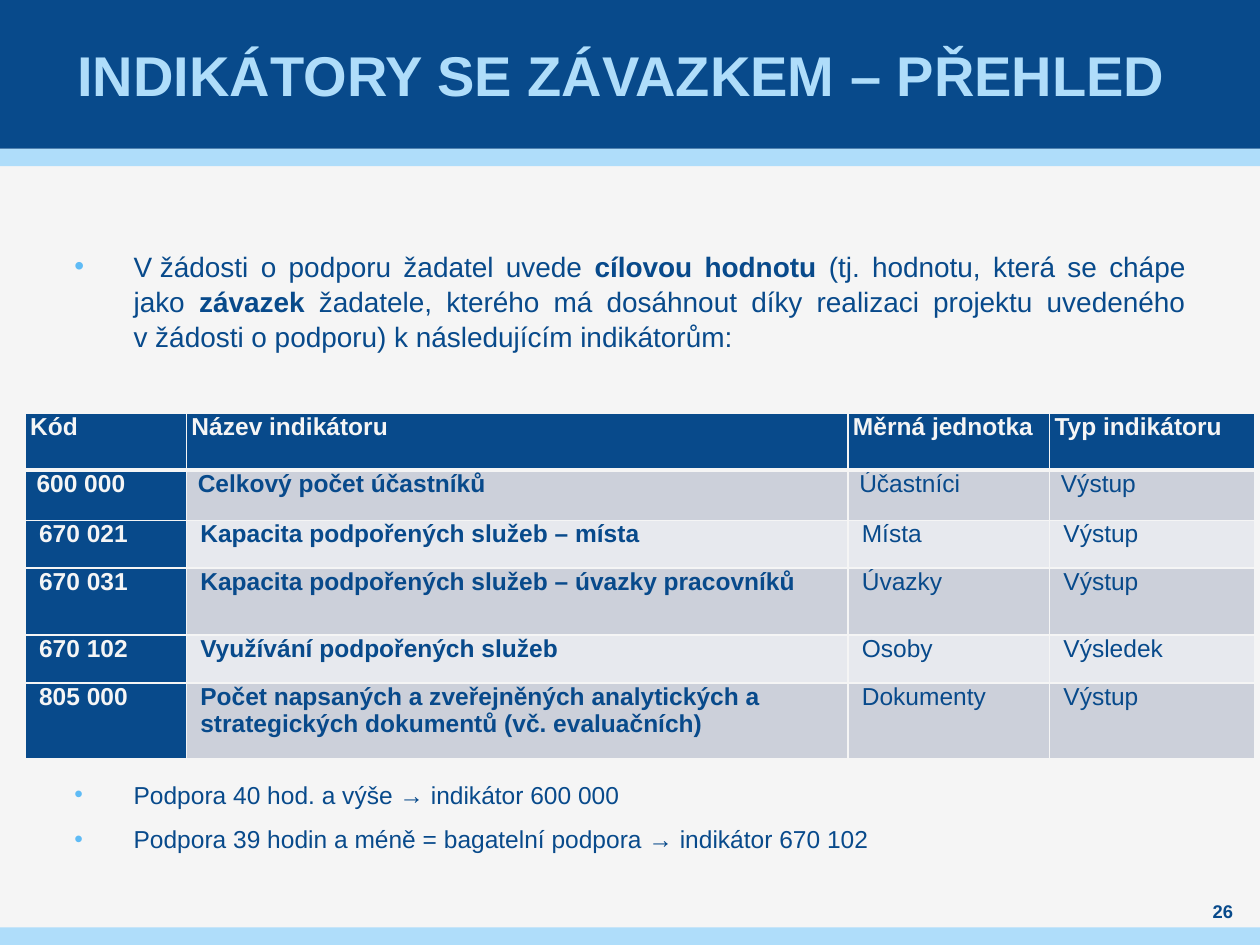
from lxml import etree
from pptx import Presentation, util as u
from pptx.dml.color import RGBColor
from pptx.enum import shapes, text
from pptx.oxml.ns import qn

WIDE, HIGH = 10, 7.5
THEME = {
    "navy": "084A8B", "sky": "AFDDFA", "pale": "F5F5F5", "dot": "5FBBF5",
    "odd": "CCD0DA", "even": "E7E9EE", "font": "Arial",
    "title": 32, "lead": 16, "text": 14, "page": 10.5,
}

TITLE = "INDIKÁTORY SE ZÁVAZKEM – PŘEHLED "
PAGE = "26"
# Each item is a list of (words, bold) runs.
LEAD = [[
    ("V\u00a0žádosti o podporu žadatel uvede ", False),
    ("cílovou hodnotu ", True),
    ("(tj. hodnotu, která se chápe jako ", False),
    ("závazek", True),
    (" žadatele, kterého má dosáhnout díky realizaci projektu uvedeného "
     "v\u00a0žádosti o podporu) k\u00a0následujícím indikátorům:", False),
]]
NOTES = [
    [("Podpora 40 hod. a výše → indikátor 600 000", False)],
    [("Podpora 39 hodin a méně = bagatelní podpora → indikátor 670 102", False)],
]
TABLE = [
    ("Kód", "Název indikátoru", "Měrná jednotka", "Typ indikátoru"),
    ("600 000", "Celkový počet účastníků", "Účastníci", "Výstup"),
    ("670 021", "Kapacita podpořených služeb – místa", "Místa", "Výstup"),
    ("670 031", "Kapacita podpořených služeb – úvazky pracovníků", "Úvazky", "Výstup"),
    ("670 102", "Využívání podpořených služeb", "Osoby", "Výsledek"),
    ("805 000", "Počet napsaných a zveřejněných analytických a strategických "
     "dokumentů (vč. evaluačních)", "Dokumenty", "Výstup"),
]
COLS = (1.28, 5.25, 1.6, 1.63)
ROWS = (0.45, 0.4, 0.38, 0.53, 0.38, 0.6)
PADS = (0.04, 0.09) + (0.11,) * 4
# Bands: top, height, colour
BANDS = [(1.18, 0.14, "sky"), (0, 1.18, "navy"), (HIGH - 0.14, 0.14, "sky")]


def tint(name):
    return RGBColor.from_string(THEME[name])


def place(*box):
    return [u.Inches(n) for n in box]


def apply(item, **look):
    for key, value in look.items():
        setattr(item, key, value)


def write(para, words, size, color, bold):
    run = para.add_run()
    run.text = words
    apply(run.font, name=THEME["font"], size=u.Pt(THEME[size]), bold=bold)
    run.font.color.rgb = tint(color)


def frame(slide, box, anchor=text.MSO_ANCHOR.TOP, side=0):
    area = slide.shapes.add_textbox(*place(*box)).text_frame
    apply(area, word_wrap=True, vertical_anchor=anchor, margin_top=0,
          margin_bottom=0, margin_left=u.Inches(side), margin_right=u.Inches(side))
    return area


def label(slide, box, words, size, color, side=0):
    """Add one bold line centred in its box."""
    para = frame(slide, box, text.MSO_ANCHOR.MIDDLE, side).paragraphs[0]
    para.alignment = text.PP_ALIGN.CENTER
    write(para, words, size, color, True)


def bullets(slide, box, items, size):
    area = frame(slide, box)
    for i, runs in enumerate(items):
        para = area.add_paragraph() if i else area.paragraphs[0]
        apply(para, alignment=text.PP_ALIGN.JUSTIFY, line_spacing=1.04,
              space_after=u.Pt(8))
        props = para._p.get_or_add_pPr()
        props.set("marL", str(u.Inches(0.47)))
        props.set("indent", str(-u.Inches(0.47)))
        tone = etree.SubElement(props, qn("a:buClr"))
        etree.SubElement(tone, qn("a:srgbClr"), val=THEME["dot"])
        etree.SubElement(props, qn("a:buFont"), typeface=THEME["font"])
        etree.SubElement(props, qn("a:buChar"), char="•")
        for words, bold in runs:
            write(para, words, size, "navy", bold)


def border(cell, row):
    """Draw thin cell edges, with a thick one under the header."""
    props = cell._tc.get_or_add_tcPr()
    thick = {0: "B", 1: "T"}.get(row)
    for i, side in enumerate("LRTB"):
        line = etree.Element(qn("a:ln" + side), w=str(u.Pt(3 if side == thick else 1)))
        fill = etree.SubElement(line, qn("a:solidFill"))
        etree.SubElement(fill, qn("a:srgbClr"), val=THEME["pale"])
        props.insert(i, line)


def grid(slide, left, top):
    table = slide.shapes.add_table(
        len(ROWS), len(COLS), *place(left, top, sum(COLS), sum(ROWS))).table
    apply(table, first_row=False, horz_banding=False)
    for col, width in zip(table.columns, COLS):
        col.width = u.Inches(width)
    for r, (line, high, pad) in enumerate(zip(TABLE, ROWS, PADS)):
        table.rows[r].height = u.Inches(high)
        for c, words in enumerate(line):
            cell = table.cell(r, c)
            head = r == 0 or c == 0
            apply(cell, margin_left=u.Inches(pad), margin_right=0,
                  margin_top=0, margin_bottom=0)
            cell.fill.solid()
            cell.fill.fore_color.rgb = tint(
                "navy" if head else "odd" if r % 2 else "even")
            border(cell, r)
            write(cell.text_frame.paragraphs[0], words, "text",
                  "pale" if head else "navy", head or c == 1)


def main():
    deck = Presentation()
    apply(deck, slide_width=u.Inches(WIDE), slide_height=u.Inches(HIGH))
    slide = deck.slides.add_slide(deck.slide_layouts[6])
    slide.background.fill.solid()
    slide.background.fill.fore_color.rgb = tint("pale")

    for top, high, color in BANDS:
        band = slide.shapes.add_shape(
            shapes.MSO_SHAPE.RECTANGLE, *place(0, top, WIDE, high))
        band.shadow.inherit = False
        band.fill.solid()
        band.fill.fore_color.rgb = tint(color)
        band.line.fill.background()

    label(slide, (0.39, 0, 9.21, 1.18), TITLE, "title", "sky", 0.04)
    bullets(slide, (0.59, 1.97, 8.82, 1), LEAD, "lead")
    grid(slide, 0.2, 3.28)
    bullets(slide, (0.59, 6.18, 8.82, 0.7), NOTES, "text")
    label(slide, (9.45, 7.13, 0.51, 0.2), PAGE, "page", "navy")
    deck.save("out.pptx")


if __name__ == "__main__":
    main()
